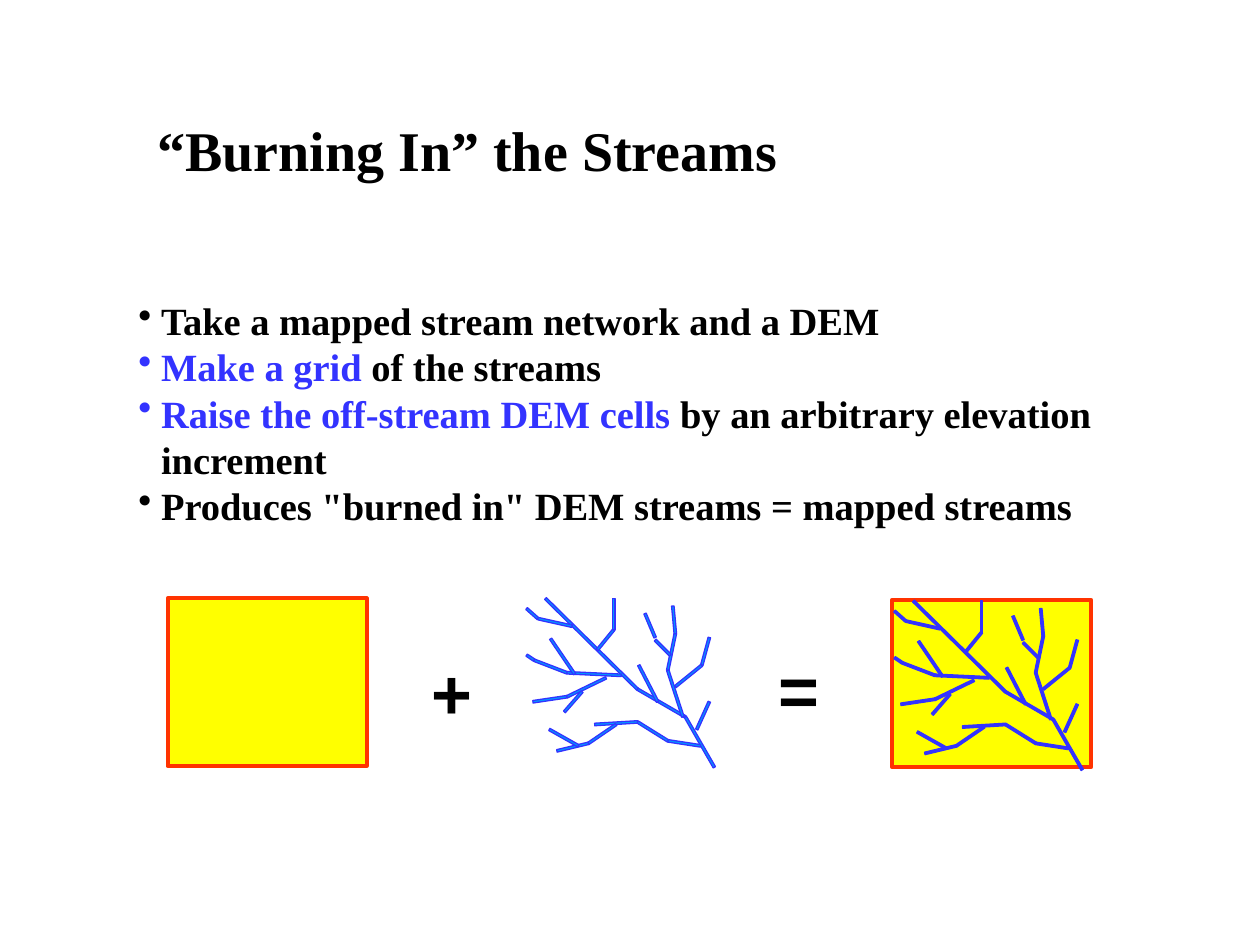
from itertools import pairwise
from math import hypot

from lxml import etree
from pptx import Presentation
from pptx.dml.color import RGBColor
from pptx.enum.shapes import MSO_SHAPE
from pptx.enum.text import MSO_ANCHOR, MSO_AUTO_SIZE, PP_ALIGN
from pptx.oxml.ns import qn
from pptx.util import Inches, Pt

RECTANGLE = MSO_SHAPE.RECTANGLE
BOTTOM = MSO_ANCHOR.BOTTOM
CENTER = PP_ALIGN.CENTER
NO_AUTOFIT = MSO_AUTO_SIZE.NONE

BLACK = RGBColor(0x00, 0x00, 0x00)
BLUE = RGBColor(0x33, 0x33, 0xFF)
LIGHT_BLUE = RGBColor(0x00, 0x99, 0xFF)
YELLOW = RGBColor(0xFF, 0xFF, 0x00)
RED = RGBColor(0xFF, 0x33, 0x00)

SERIF = "Times New Roman"
SANS = "Arial"

# Content
TITLE = "“Burning In” the Streams"
BULLETS = [
    [("Take a mapped stream network and a DEM", BLACK)],
    [("Make a grid", BLUE), (" of the streams", BLACK)],
    [("Raise the off-stream DEM cells", BLUE),
     (" by an arbitrary elevation increment", BLACK)],
    [('Produces "burned in" DEM streams = mapped streams', BLACK)],
]
OPERATORS = [("+", 3.33, 5.11), ("=", 6.08, 5.08)]

# Stream centre lines, in inches from the network's top left corner
STREAMS = [
    [(0.17, 0.01), (0.9, 0.73), (1.28, 0.95), (1.51, 1.35)],
    [(0.71, 0.01), (0.71, 0.26), (0.58, 0.42)],
    [(0.02, 0.46), (0.08, 0.5), (0.34, 0.6), (0.77, 0.62)],
    [(0.21, 0.33), (0.4, 0.61)],
    [(0.07, 0.83), (0.34, 0.79), (0.65, 0.64)],
    [(1.18, 0.07), (1.2, 0.29), (1.14, 0.58), (1.26, 0.95)],
    [(1.04, 0.34), (1.16, 0.46)],
    [(0.96, 0.13), (1.04, 0.32)],
    [(0.91, 0.54), (1.06, 0.83)],
    [(1.4, 1.18), (1.14, 1.14), (0.9, 0.99), (0.56, 1.01)],
    [(0.73, 1.01), (0.51, 1.16), (0.26, 1.22)],
    [(1.47, 0.83), (1.37, 1.05)],
    [(1.47, 0.32), (1.41, 0.54), (1.2, 0.71)],
    [(0.02, 0.09), (0.11, 0.17), (0.38, 0.23)],
    [(0.2, 1.05), (0.43, 1.18)],
    [(0.32, 0.91), (0.46, 0.75)],
]
STREAM_WIDTH = 0.02
DEM_SIZE = (1.58, 1.33)


def style_shape(shape, fill, line, line_width):
    shape.shadow.inherit = False
    shape.fill.solid()
    shape.fill.fore_color.rgb = fill
    shape.line.color.rgb = line
    shape.line.width = Pt(line_width)


def style_run(run, font_name, size, color=BLACK):
    run.font.name = font_name
    run.font.size = Pt(size)
    run.font.bold = True
    run.font.color.rgb = color


def add_dem(shapes, left, top):
    dem = shapes.add_shape(
        RECTANGLE, *(Inches(value) for value in (left, top, *DEM_SIZE)))
    style_shape(dem, YELLOW, RED, 2.25)


def add_streams(shapes, left, top, fill):
    for stream in STREAMS:
        for (x1, y1), (x2, y2) in pairwise(stream):
            # Half-width offset at right angles to the segment
            scale = STREAM_WIDTH / 2 / hypot(x2 - x1, y2 - y1)
            dx, dy = (y1 - y2) * scale, (x2 - x1) * scale
            corners = [(x1 + dx, y1 + dy), (x2 + dx, y2 + dy),
                       (x2 - dx, y2 - dy), (x1 - dx, y1 - dy)]
            points = [(Inches(left + x), Inches(top + y)) for x, y in corners]
            builder = shapes.build_freeform(*points[0])
            builder.add_line_segments(points[1:], close=True)
            style_shape(builder.convert_to_shape(), fill, BLUE, 0.75)


def set_bullet(paragraph, indent):
    properties = paragraph._p.get_or_add_pPr()
    properties.set("marL", str(Inches(indent)))
    properties.set("indent", str(-Inches(indent)))
    etree.SubElement(properties, qn("a:buChar")).set("char", "•")


presentation = Presentation()
presentation.slide_width = Inches(10)
presentation.slide_height = Inches(7.5)
slide = presentation.slides.add_slide(presentation.slide_layouts[5])

# Title
title = slide.shapes.title
title.left, title.top = Inches(0.27), Inches(0.91)
title.width, title.height = Inches(6.88), Inches(0.59)
title.text_frame.text = TITLE
title.text_frame.auto_size = NO_AUTOFIT
title.text_frame.vertical_anchor = BOTTOM
title_paragraph = title.text_frame.paragraphs[0]
title_paragraph.alignment = CENTER
style_run(title_paragraph.runs[0], SERIF, 32)

# Burned-in DEM and the separate stream network
burned_in = slide.shapes.add_group_shape()
add_dem(burned_in.shapes, 7.08, 4.76)
add_streams(burned_in.shapes, 7.08, 4.76, BLUE)
network = slide.shapes.add_group_shape()
add_streams(network.shapes, 4.16, 4.74, LIGHT_BLUE)

# Operators
for symbol, left, top in OPERATORS:
    box = slide.shapes.add_textbox(
        Inches(left), Inches(top), Inches(0.53), Inches(0.77))
    box.text_frame.text = symbol
    style_run(box.text_frame.paragraphs[0].runs[0], SANS, 40)

# Bullet list
steps = slide.shapes.add_textbox(
    Inches(1), Inches(2.31), Inches(7.82), Inches(1.93)).text_frame
steps.word_wrap = True
for index, parts in enumerate(BULLETS):
    paragraph = steps.add_paragraph() if index else steps.paragraphs[0]
    paragraph.line_spacing = Pt(26.4)
    set_bullet(paragraph, 0.18)
    for text, color in parts:
        run = paragraph.add_run()
        run.text = text
        style_run(run, SERIF, 22, color)

# Plain DEM
add_dem(slide.shapes, 1.33, 4.75)

presentation.save("out.pptx")
